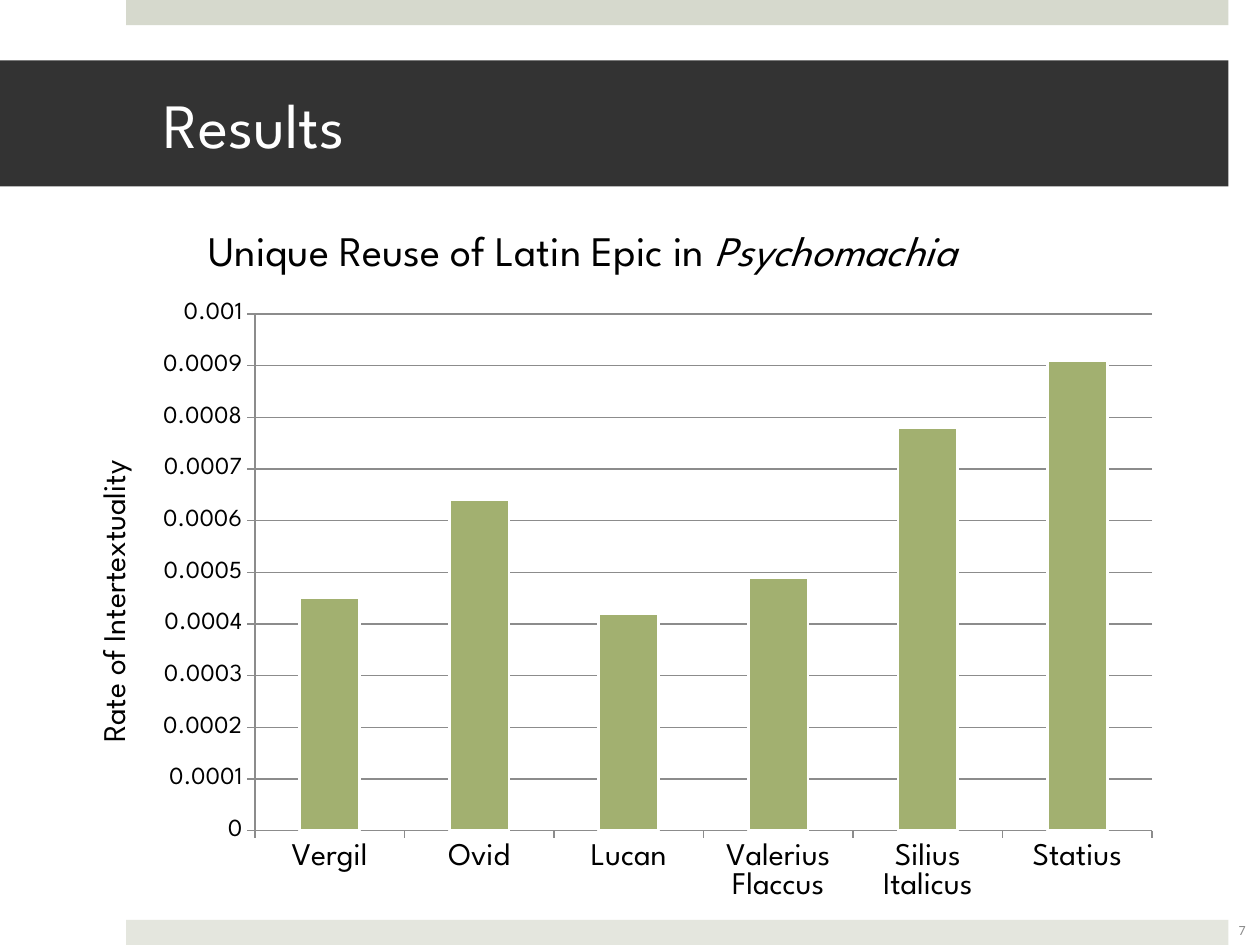
"""Build the Results slide: a column chart of Latin epic reuse in Psychomachia."""
from dataclasses import dataclass

from lxml import etree
from pptx import Presentation
from pptx import util as u
from pptx.chart.data import CategoryChartData
from pptx.dml.color import RGBColor
from pptx.enum import chart as charts, shapes, text

TITLE = "Results"
HEADING = [("Unique Reuse of Latin Epic in ", False), ("Psychomachia", True)]
AXIS_TITLE = "Rate of Intertextuality"
PAGE = "7"
RATES = {
    "Vergil": 0.00045,
    "Ovid": 0.00064,
    "Lucan": 0.00042,
    "Valerius Flaccus": 0.00049,
    "Silius Italicus": 0.00078,
    "Statius": 0.00091,
}
WIDTH, HEIGHT = 10, 7.5
BAND_LEFT, BAND_RIGHT, BAND_HEIGHT = 1, 9.75, 0.2
PLOT = {"x": 0.167, "y": 0.039, "w": 0.813, "h": 0.83}


@dataclass(frozen=True)
class Theme:
    """Fonts, colours and type sizes."""
    font: str = "League Spartan"
    number_font: str = "Calibri"
    dark: str = "333333"
    white: str = "FFFFFF"
    black: str = "000000"
    gray: str = "8C8C8C"
    top_band: str = "D6D9CD"
    bottom_band: str = "E4E6DE"
    column: str = "A2B070"
    title: int = 36
    heading: int = 24
    label: int = 18
    tick: int = 14
    number: int = 8


THEME = Theme()


def box(*lengths):
    return [u.Inches(length) for length in lengths]


def fill(item, color):
    item.fill.solid()
    item.fill.fore_color.rgb = RGBColor.from_string(color)


def style(font, size, color=THEME.black, name=THEME.font, italic=False):
    font.size, font.name, font.bold, font.italic = u.Pt(size), name, False, italic
    font.color.rgb = RGBColor.from_string(color)


def add_band(slide, top, color):
    band = slide.shapes.add_shape(
        shapes.MSO_SHAPE.RECTANGLE,
        *box(BAND_LEFT, top, BAND_RIGHT - BAND_LEFT, BAND_HEIGHT))
    band.shadow.inherit = False
    band.line.fill.background()
    fill(band, color)


def add_title(slide):
    title = slide.shapes.title
    title.left, title.top, title.width, title.height = box(0, 0.48, BAND_RIGHT, 1)
    fill(title, THEME.dark)
    frame = title.text_frame
    frame.text = TITLE
    frame.vertical_anchor = text.MSO_ANCHOR.MIDDLE
    frame.margin_left, frame.margin_right = box(1.3, 0.3)
    frame.paragraphs[0].alignment = text.PP_ALIGN.LEFT
    style(frame.paragraphs[0].runs[0].font, THEME.title, THEME.white)


def add_heading(slide):
    heading = slide.shapes.add_textbox(*box(1.56, 1.73, 7.5, 0.5))
    fill(heading, THEME.white)
    heading.text_frame.word_wrap = False
    paragraph = heading.text_frame.paragraphs[0]
    for words, italic in HEADING:
        run = paragraph.add_run()
        run.text = words
        style(run.font, THEME.heading, italic=italic)


def add_page_number(slide):
    number = slide.shapes.add_textbox(*box(9.61, 7.18, 0.5, 0.4))
    frame = number.text_frame
    frame.word_wrap = True
    frame.vertical_anchor = text.MSO_ANCHOR.MIDDLE
    frame.text = PAGE
    frame.paragraphs[0].alignment = text.PP_ALIGN.CENTER
    style(frame.paragraphs[0].runs[0].font, THEME.number, THEME.gray, THEME.number_font)


def fix_plot_area(chart):
    area = chart.plots[0]._element.getparent()
    namespace = etree.QName(area).namespace
    for old in area.findall(f"{{{namespace}}}layout"):
        area.remove(old)
    layout = etree.Element(f"{{{namespace}}}layout")
    area.insert(0, layout)
    manual = etree.SubElement(layout, f"{{{namespace}}}manualLayout")
    settings = {"layoutTarget": "inner", "xMode": "edge", "yMode": "edge", **PLOT}
    for name, value in settings.items():
        etree.SubElement(manual, f"{{{namespace}}}{name}").set("val", str(value))


def add_chart(slide):
    data = CategoryChartData(number_format="General")
    data.categories = list(RATES)
    data.add_series("Series 1", list(RATES.values()))
    chart = slide.shapes.add_chart(
        charts.XL_CHART_TYPE.COLUMN_CLUSTERED, *box(0.56, 2.3, 8.76, 4.94), data).chart
    chart.has_legend = chart.has_title = False
    style(chart.font, THEME.label)
    plot = chart.plots[0]
    plot.gap_width, plot.vary_by_categories = 150, False
    column = plot.series[0].format
    fill(column, THEME.column)
    column.line.color.rgb = RGBColor.from_string(THEME.white)
    column.line.width = u.Pt(1.5)
    values = chart.value_axis
    values.minimum_scale, values.maximum_scale, values.major_unit = 0, 0.001, 0.0001
    values.has_major_gridlines = True
    style(values.tick_labels.font, THEME.tick)
    frame = values.axis_title.text_frame
    frame.text = AXIS_TITLE
    style(frame.paragraphs[0].runs[0].font, THEME.label)
    for axis in (chart.category_axis, values):
        axis.major_tick_mark = charts.XL_TICK_MARK.OUTSIDE
    for lines in (chart.category_axis, values, values.major_gridlines):
        lines.format.line.color.rgb = RGBColor.from_string(THEME.gray)
        lines.format.line.width = u.Pt(0.75)
    fix_plot_area(chart)


def main():
    presentation = Presentation()
    presentation.slide_width, presentation.slide_height = box(WIDTH, HEIGHT)
    slide = presentation.slides.add_slide(presentation.slide_layouts.get_by_name("Title Only"))
    add_band(slide, 0, THEME.top_band)
    add_band(slide, HEIGHT - BAND_HEIGHT, THEME.bottom_band)
    add_title(slide)
    add_page_number(slide)
    add_heading(slide)
    add_chart(slide)
    presentation.save("out.pptx")


if __name__ == "__main__":
    main()
